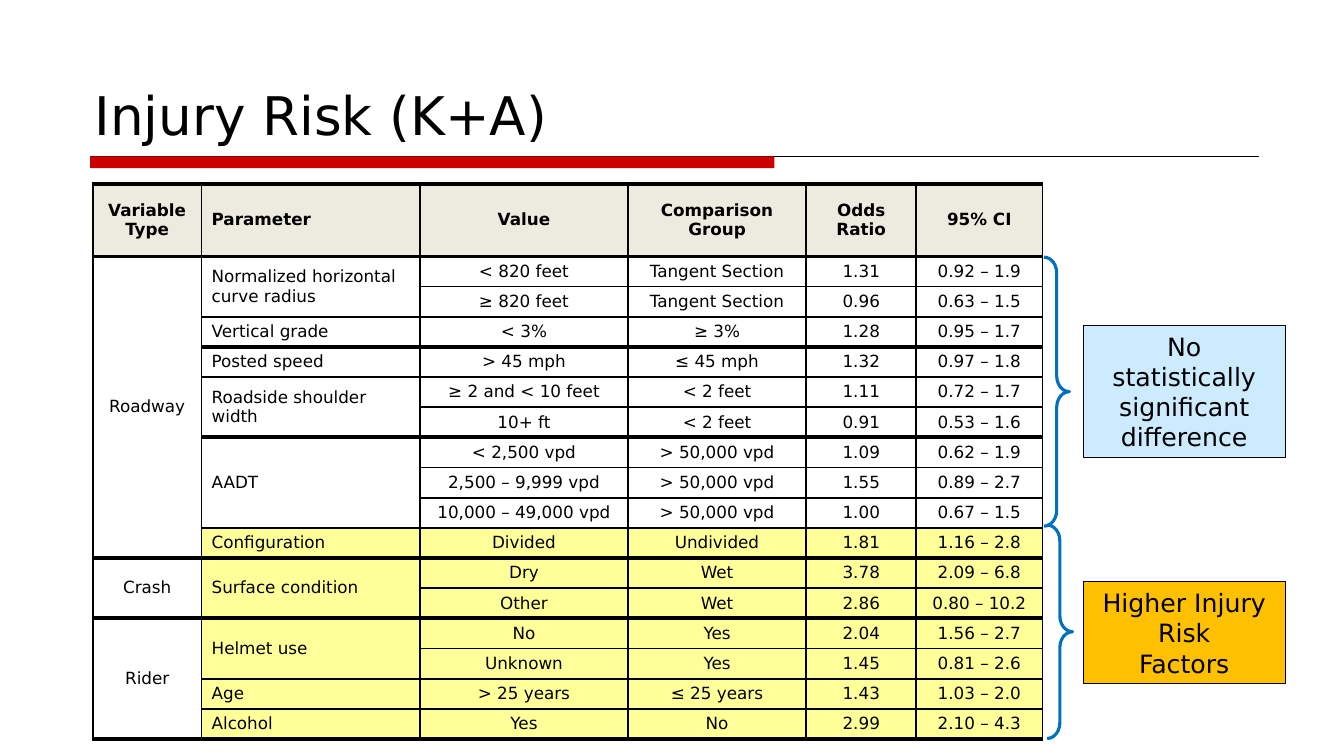
from lxml.etree import SubElement
from pptx import Presentation
from pptx.dml.color import RGBColor
from pptx.enum.shapes import MSO_CONNECTOR, MSO_SHAPE
from pptx.enum.text import MSO_ANCHOR, MSO_AUTO_SIZE as FIT, PP_ALIGN
from pptx.oxml.ns import qn
from pptx.util import Cm, Pt

FONT = "DejaVu Sans"
COLORS = {
    "ink": "000000", "red": "CC0000", "header": "EDEBE0", "risk": "FFFF99",
    "brace": "0070C0", "neutral": "CCEBFF", "warning": "FFC000",
}
NO_STYLE = "{2D5ABB26-0587-4C30-8999-92F81FD0307C}"

COL_WIDTHS = [2.74, 5.51, 5.23, 4.5, 2.77, 3.18]
HEADER_HEIGHT, ROW_HEIGHT = 1.83, 0.76
FIRST_RISK_ROW = 10
THICK_BELOW = {-1, 0, 3, 6, 10, 12, 16}

# None continues the cell above
ROWS = [
    ["Variable\nType", "Parameter", "Value", "Comparison Group", "Odds Ratio", "95% CI"],
    ["Roadway", "Normalized horizontal curve radius", "< 820 feet", "Tangent Section", "1.31", "0.92 – 1.9"],
    [None, None, "≥ 820 feet", "Tangent Section", "0.96", "0.63 – 1.5"],
    [None, "Vertical grade", "< 3%", "≥ 3%", "1.28", "0.95 – 1.7"],
    [None, "Posted speed", "> 45 mph", "≤ 45 mph", "1.32", "0.97 – 1.8"],
    [None, "Roadside shoulder width", "≥ 2 and < 10 feet", "< 2 feet", "1.11", "0.72 – 1.7"],
    [None, None, "10+ ft", "< 2 feet", "0.91", "0.53 – 1.6"],
    [None, "AADT", "< 2,500 vpd", "> 50,000 vpd", "1.09", "0.62 – 1.9"],
    [None, None, "2,500 – 9,999 vpd", "> 50,000 vpd", "1.55", "0.89 – 2.7"],
    [None, None, "10,000 – 49,000 vpd", "> 50,000 vpd", "1.00", "0.67 – 1.5"],
    [None, "Configuration", "Divided", "Undivided", "1.81", "1.16 – 2.8"],
    ["Crash", "Surface condition", "Dry", "Wet", "3.78", "2.09 – 6.8"],
    [None, None, "Other", "Wet", "2.86", "0.80 – 10.2"],
    ["Rider", "Helmet use", "No", "Yes", "2.04", "1.56 – 2.7"],
    [None, None, "Unknown", "Yes", "1.45", "0.81 – 2.6"],
    [None, "Age", "> 25 years", "≤ 25 years", "1.43", "1.03 – 2.0"],
    [None, "Alcohol", "Yes", "No", "2.99", "2.10 – 4.3"],
]


def rgb(name):
    return RGBColor.from_string(COLORS[name])


def box(left, top, width, height):
    return Cm(left), Cm(top), Cm(width), Cm(height)


def paint(fill, color):
    if color:
        fill.solid()
        fill.fore_color.rgb = rgb(color)
    else:
        fill.background()


def format_text(tf, size, align=PP_ALIGN.CENTER, bold=False):
    font = {"name": FONT, "size": Pt(size), "bold": bold}
    for p in tf.paragraphs:
        p.alignment = align
        for r in p.runs:
            for key, value in font.items():
                setattr(r.font, key, value)
            r.font.color.rgb = rgb("ink")


def add_title(s, text):
    sp = s.shapes.title
    place = dict(zip(("left", "top", "width", "height"), box(2.13, 0.43, 29.64, 3.39)))
    for key, value in place.items():
        setattr(sp, key, value)
    tf = sp.text_frame
    tf.text = text
    for key, value in {"vertical_anchor": MSO_ANCHOR.BOTTOM, "auto_size": FIT.NONE,
                       "word_wrap": True}.items():
        setattr(tf, key, value)
    format_text(tf, 38, PP_ALIGN.LEFT)


def add_title_rule(s):
    line = s.shapes.add_connector(MSO_CONNECTOR.STRAIGHT, Cm(2.27), Cm(3.94), Cm(31.72), Cm(3.94))
    line.line.color.rgb = rgb("ink")
    line.line.width = Pt(0.75)
    SubElement(line._element.spPr, qn("a:effectLst"))
    add_shape(s, MSO_SHAPE.RECTANGLE, box(2.27, 3.94, 17.25, 0.3), fill="red")


def add_shape(s, kind, place, fill=None, line=None, weight=0.75):
    sp = s.shapes.add_shape(kind, *place)
    sp.shadow.inherit = False
    paint(sp.fill, fill)
    paint(sp.line.fill, line)
    if line:
        sp.line.width = Pt(weight)
    return sp


def add_brace(s, left, top, height):
    sp = add_shape(s, MSO_SHAPE.RIGHT_BRACE, box(left, top, 0.64, height), line="brace", weight=2.25)
    sp.adjustments[0] = 0.62


def add_callout(s, top, height, text, fill):
    sp = add_shape(s, MSO_SHAPE.RECTANGLE, box(27.3, top, 5.09, height), fill, "ink")
    tf = sp.text_frame
    tf.text = text
    tf.word_wrap = True
    tf.auto_size = FIT.SHAPE_TO_FIT_TEXT
    format_text(tf, 18)


def set_borders(cell, edges):
    """Draw the given edges, a dict of side tag to width in points."""
    tc_pr = cell._tc.get_or_add_tcPr()
    for index, (side, width) in enumerate(edges.items()):
        ln = tc_pr.makeelement(qn(f"a:{side}"), {"w": str(Pt(width))})
        tc_pr.insert(index, ln)
        SubElement(SubElement(ln, qn("a:solidFill")), qn("a:srgbClr"), val=COLORS["ink"])


def edge_width(row):
    return 3 if row in THICK_BELOW else 1.5


def span_end(row, col):
    while row + 1 < len(ROWS) and ROWS[row + 1][col] is None:
        row += 1
    return row


def fill_cell(table, row, col):
    cell, text, last = table.cell(row, col), ROWS[row][col], span_end(row, col)
    header = row == 0
    risk = row >= FIRST_RISK_ROW and col > 0
    paint(cell.fill, "header" if header else "risk" if risk else None)
    edges = {"lnL": 1.5, "lnR": 1.5}
    if text is not None:
        edges["lnT"] = edge_width(row - 1)
    if text is not None or row == last:
        edges["lnB"] = edge_width(last)
    set_borders(cell, edges)
    if text is None:
        return
    cell.text = text
    cell.vertical_anchor = MSO_ANCHOR.MIDDLE
    format_text(cell.text_frame, 12, PP_ALIGN.LEFT if col == 1 else PP_ALIGN.CENTER, header)
    if last > row:
        cell.merge(table.cell(last, col))


def add_risk_table(s):
    height = HEADER_HEIGHT + ROW_HEIGHT * (len(ROWS) - 1)
    frame = s.shapes.add_table(len(ROWS), len(COL_WIDTHS), *box(2.34, 4.63, sum(COL_WIDTHS), height))
    table = frame.table
    table.first_row = table.horz_banding = False
    table._tbl.tblPr.find(qn("a:tableStyleId")).text = NO_STYLE
    for column, width in zip(table.columns, COL_WIDTHS):
        column.width = Cm(width)
    for i, row in enumerate(table.rows):
        row.height = Cm(ROW_HEIGHT if i else HEADER_HEIGHT)
        for j in range(len(COL_WIDTHS)):
            fill_cell(table, i, j)


def main():
    prs = Presentation()
    prs.slide_width, prs.slide_height = Cm(33.87), Cm(19.05)
    s = prs.slides.add_slide(prs.slide_layouts[5])
    add_title_rule(s)
    add_title(s, "Injury Risk (K+A)")
    add_risk_table(s)
    add_brace(s, 26.31, 6.48, 6.78)
    add_brace(s, 26.39, 13.23, 5.38)
    add_callout(s, 8.2, 3.33, "No statistically significant difference", "neutral")
    add_callout(s, 14.66, 2.57, "Higher Injury\nRisk\nFactors", "warning")
    prs.save("out.pptx")


if __name__ == "__main__":
    main()
